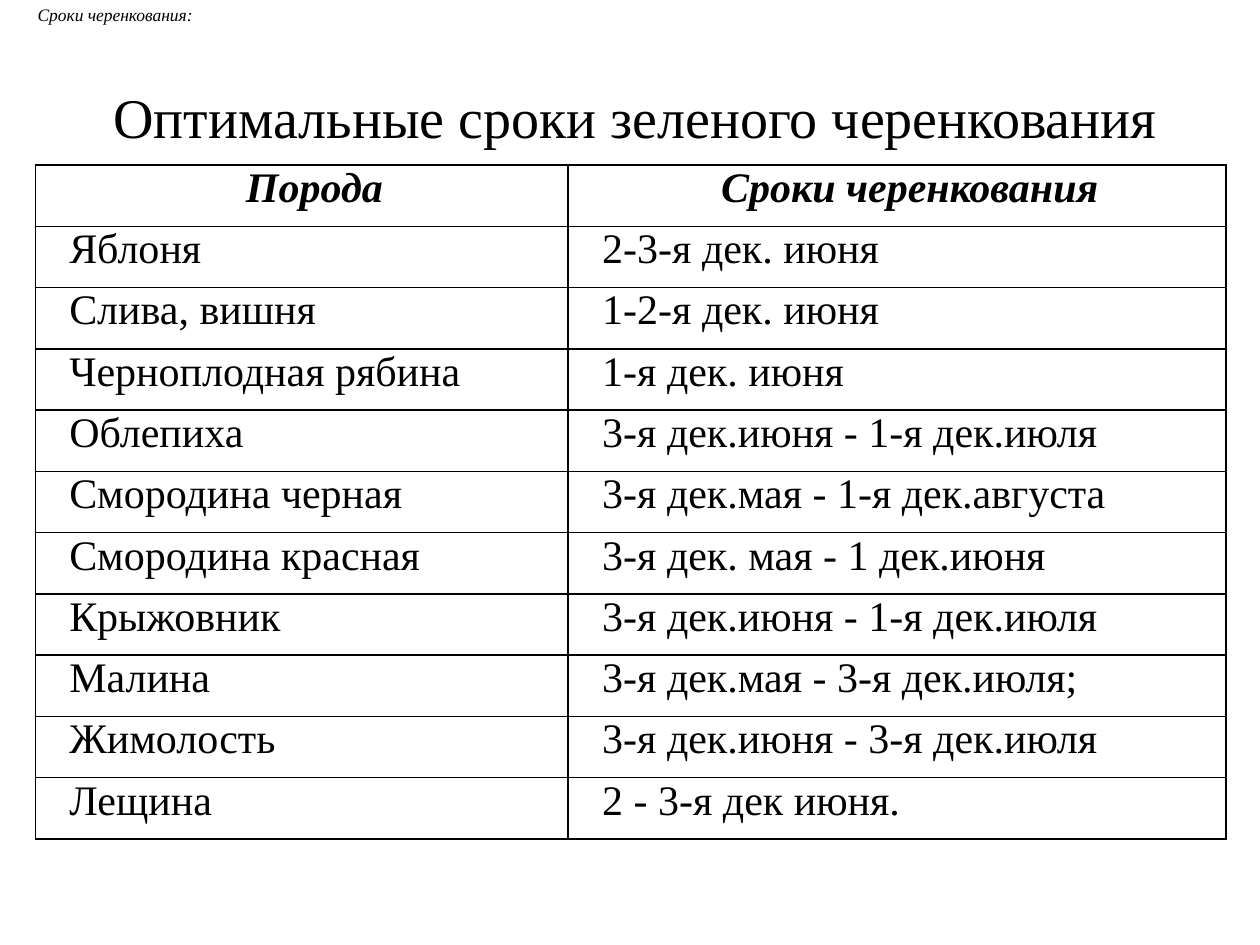
from lxml import etree
from pptx import Presentation
from pptx.dml.color import RGBColor
from pptx.enum.text import MSO_ANCHOR, PP_ALIGN
from pptx.oxml.ns import qn
from pptx.util import Inches, Pt

CENTER, JUSTIFY, LEFT = PP_ALIGN.CENTER, PP_ALIGN.JUSTIFY, PP_ALIGN.LEFT
TOP, MIDDLE = MSO_ANCHOR.TOP, MSO_ANCHOR.MIDDLE
TITLE_ONLY = 5

HEADINGS = ("Порода", "Сроки черенкования")
CUTTING_TIMES = [
    ("Яблоня", "2-3-я дек. июня"),
    ("Слива, вишня", "1-2-я дек. июня"),
    ("Черноплодная рябина", "1-я дек. июня"),
    ("Облепиха", "3-я дек.июня - 1-я дек.июля"),
    ("Смородина черная", "3-я дек.мая - 1-я дек.августа"),
    ("Смородина красная", "3-я дек. мая - 1 дек.июня"),
    ("Крыжовник", "3-я дек.июня - 1-я дек.июля"),
    ("Малина", "3-я дек.мая - 3-я дек.июля;"),
    ("Жимолость", "3-я дек.июня - 3-я дек.июля"),
    ("Лещина", "2 - 3-я дек июня."),
]


def color(hex_code):
    return RGBColor.from_string(hex_code)


class SlideBuilder:
    """Holds the text style and the slide being filled."""

    font = "Times New Roman"
    ink = "000000"
    indent = Inches(0.2)

    def __init__(self, slide):
        self.slide = slide

    def add_text(self, frame, wording, size, align, bold=False, italic=False, indent=0):
        paragraph = frame.paragraphs[0]
        paragraph.alignment = align
        properties = paragraph._p.get_or_add_pPr()
        properties.set("marL", "0")
        properties.set("indent", str(indent))
        run = paragraph.add_run()
        run.text = wording
        run.font.name = self.font
        run.font.size = Pt(size)
        run.font.bold = bold
        run.font.italic = italic
        run.font.color.rgb = color(self.ink)

    def title(self, wording, left, top, width, height):
        heading = self.slide.shapes.title
        heading.left, heading.top = left, top
        heading.width, heading.height = width, height
        heading.text_frame.vertical_anchor = MIDDLE
        self.add_text(heading.text_frame, wording, 32, CENTER)

    def caption(self, wording, left, top, width, height):
        frame = self.slide.shapes.add_textbox(left, top, width, height).text_frame
        frame.word_wrap = True
        frame.vertical_anchor = TOP
        frame.margin_top = Inches(0.03)
        self.add_text(frame, wording, 10, LEFT, italic=True, indent=self.indent)

    def border(self, cell):
        properties = cell._tc.get_or_add_tcPr()
        for position, side in enumerate(("a:lnL", "a:lnR", "a:lnT", "a:lnB")):
            line = etree.Element(qn(side), w=str(Pt(1)))
            fill = etree.SubElement(line, qn("a:solidFill"))
            etree.SubElement(fill, qn("a:srgbClr"), val=self.ink)
            properties.insert(position, line)

    def table(self, rows, left, top, widths, height):
        table = self.slide.shapes.add_table(
            len(rows), len(widths), left, top, sum(widths), height
        ).table
        table.first_row = table.horz_banding = False
        for column, width in zip(table.columns, widths):
            column.width = width
        for index, (row, wordings) in enumerate(zip(table.rows, rows)):
            header = index == 0
            align = CENTER if header else JUSTIFY
            for cell, wording in zip(row.cells, wordings):
                cell.margin_left = cell.margin_right = Inches(0.07)
                cell.margin_top = cell.margin_bottom = 0
                cell.fill.background()
                self.border(cell)
                self.add_text(cell.text_frame, wording, 24, align, header, header, self.indent)


def main():
    deck = Presentation()
    deck.slide_width, deck.slide_height = Inches(10), Inches(7.5)
    builder = SlideBuilder(deck.slides.add_slide(deck.slide_layouts[TITLE_ONLY]))
    builder.title(
        "Оптимальные сроки зеленого черенкования",
        Inches(0.2), Inches(0.3), Inches(9.69), Inches(1.25),
    )
    builder.table(
        [HEADINGS, *CUTTING_TIMES],
        Inches(0.28), Inches(1.31), (Inches(4.23), Inches(5.22)), Inches(5.35),
    )
    builder.caption("Сроки черенкования:", 0, 0, Inches(10), Inches(0.5))
    deck.save("out.pptx")


if __name__ == "__main__":
    main()
